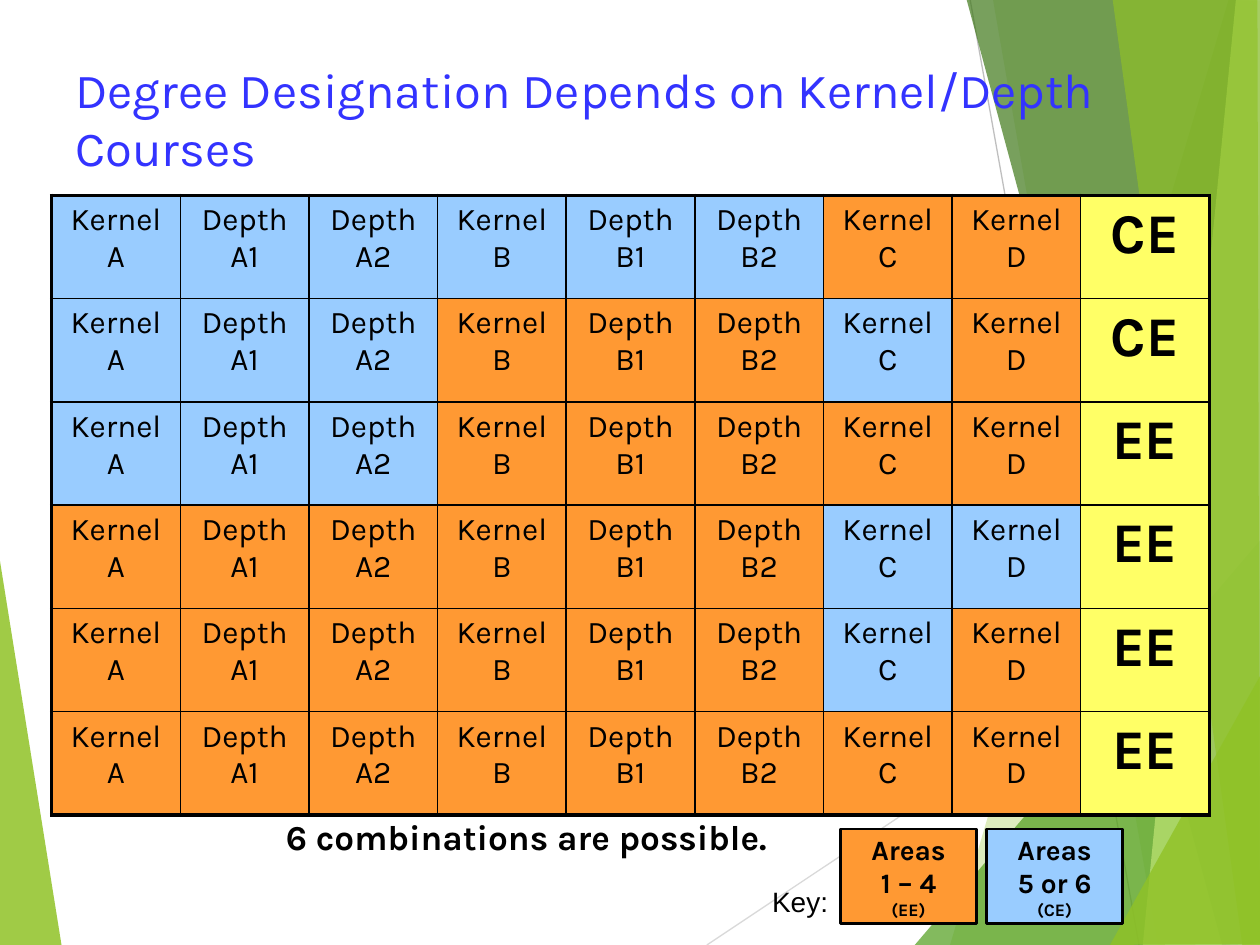
"""Build a slide that maps course choices to a CE or EE degree."""
from dataclasses import dataclass
from typing import Any

import lxml.etree
import pptx
import pptx.dml.color
import pptx.enum.shapes
import pptx.enum.text
import pptx.oxml.ns
import pptx.util

RGB = pptx.dml.color.RGBColor
ALIGN = pptx.enum.text.PP_ALIGN
LEFT, MID, RIGHT = ALIGN.LEFT, ALIGN.CENTER, ALIGN.RIGHT
TOP = pptx.enum.text.MSO_ANCHOR.TOP
CENTER = pptx.enum.text.MSO_ANCHOR.MIDDLE
qn = pptx.oxml.ns.qn

WIDE = pptx.util.Inches(10)
HIGH = pptx.util.Inches(7.5)

BLACK = RGB(0x00, 0x00, 0x00)
TITLE = RGB(0x33, 0x33, 0xFF)
BLUE = RGB(0x99, 0xCC, 0xFF)
ORANGE = RGB(0xFF, 0x99, 0x33)
YELLOW = RGB(0xFF, 0xFF, 0x66)
PALE = RGB(0xD9, 0xD9, 0xD9)
GREY = RGB(0xBF, 0xBF, 0xBF)
LIME = RGB(0x90, 0xC2, 0x26)
GREEN = RGB(0x54, 0xA0, 0x21)
FOREST = RGB(0x3F, 0x78, 0x19)
MINT = RGB(0xC0, 0xE4, 0x74)

Point = tuple[float, float]
Area = tuple[float, float, float, float]


@dataclass
class Facet:
    """A sheer shape with corners in percent of the slide."""
    color: RGB
    alpha: int
    dots: list[Point]


@dataclass
class Ray:
    """A thin line with ends in percent of the slide."""
    color: RGB
    start: Point
    end: Point


@dataclass
class Path:
    """A table row: area of each course (C or E) and the degree."""
    areas: str
    degree: str


@dataclass
class Key:
    """A colour sample with its left edge in percent."""
    left: float
    color: RGB
    span: str
    degree: str


COURSES = ["Kernel A", "Depth A1", "Depth A2", "Kernel B", "Depth B1",
           "Depth B2", "Kernel C", "Kernel D"]
FILLS = {"C": BLUE, "E": ORANGE}
PATHS = [Path("CCCCCCEE", "CE"), Path("CCCEEECE", "CE"),
         Path("CCCEEEEE", "EE"), Path("EEEEEECC", "EE"),
         Path("EEEEEECE", "EE"), Path("EEEEEEEE", "EE")]
KEYS = [Key(78.3, BLUE, "5 or 6", "(CE)"),
        Key(66.7, ORANGE, "1 – 4", "(EE)")]
RAYS = [Ray(PALE, (56.1, 100), (100.1, 60.93)),
        Ray(GREY, (77, 0), (90.4, 100))]
CORNER = Facet(LIME, 85, [(-0.1, 58.53), (4.9, 100.13), (-0.1, 100)])
FACETS = [
    Facet(LIME, 30, [(97.5, 0), (75.4, 100), (100.2, 100.13), (100.1, 0.13)]),
    Facet(LIME, 20, [(78.8, -0.13), (91.9, 100), (100.1, 100), (100.1, -0.13)]),
    Facet(GREEN, 72, [(72.6, 100), (100, 57.2), (100.1, 100)]),
    Facet(FOREST, 70, [(76.7, -0.13), (97, 100), (100.1, 99.87), (100.1, -0.13)]),
    Facet(MINT, 70, [(98.1, -0.13), (90.7, 100), (100.1, 100), (100, -0.13)]),
    Facet(LIME, 65, [(88.3, -0.13), (98.6, 100), (100, 100), (99.8, -0.13)]),
    Facet(LIME, 80, [(88.1, 100), (100.1, 71.33), (100.1, 99.87)]),
]


def place(x: float, y: float) -> tuple[int, int]:
    """Turn percent of the slide into lengths."""
    return round(WIDE * x / 100), round(HIGH * y / 100)


def frame(area: Area) -> tuple[int, int, int, int]:
    """Turn left, top, width and height in percent into lengths."""
    return place(*area[:2]) + place(*area[2:])


def write(body: Any, text: str, *, size: float, bold: bool = False,
          color: RGB = BLACK, face: str = "Karla", align: Any = MID,
          small: float = 0) -> None:
    """Fill a text frame; small sets the size of its last line."""
    body.text = text
    for par in body.paragraphs:
        par.alignment = align
        for run in par.runs:
            run.font.name = face
            run.font.size = pptx.util.Pt(size)
            run.font.bold = bold
            run.font.color.rgb = color
    if small:
        body.paragraphs[-1].runs[0].font.size = pptx.util.Pt(small)


def label(slide: Any, area: Area, text: str, **form: Any) -> None:
    """Add a text box that wraps."""
    body = slide.shapes.add_textbox(*frame(area)).text_frame
    body.word_wrap = True
    body.vertical_anchor = TOP
    write(body, text, **form)


def draw_facet(slide: Any, facet: Facet) -> None:
    """Add one sheer shape."""
    first, *rest = [place(*dot) for dot in facet.dots]
    pen = slide.shapes.build_freeform(*first)
    pen.add_line_segments(rest, close=True)
    shape = pen.convert_to_shape()
    shape.shadow.inherit = False
    shape.fill.solid()
    shape.fill.fore_color.rgb = facet.color
    shape.line.fill.background()
    tint = shape.fill._xPr.find(".//" + qn("a:srgbClr"))
    lxml.etree.SubElement(tint, qn("a:alpha"), val=str(facet.alpha * 1000))


def draw_ray(slide: Any, ray: Ray) -> None:
    """Add one thin line."""
    line = slide.shapes.add_connector(pptx.enum.shapes.MSO_CONNECTOR.STRAIGHT,
                                      *place(*ray.start), *place(*ray.end))
    line.line.color.rgb = ray.color
    line.line.width = pptx.util.Pt(0.75)
    lxml.etree.SubElement(line._element.spPr, qn("a:effectLst"))


def edge(cell: Any, side: str, thick: bool) -> None:
    """Rule one side of a cell."""
    width = pptx.util.Pt(2.25 if thick else 1)
    props = cell._tc.get_or_add_tcPr()
    line = lxml.etree.SubElement(props, qn("a:ln" + side), w=str(width))
    fill = lxml.etree.SubElement(line, qn("a:solidFill"))
    lxml.etree.SubElement(fill, qn("a:srgbClr"), val=str(BLACK))


def draw_table(slide: Any, area: Area) -> None:
    """Add the table of paths."""
    rows, cols = len(PATHS), len(COURSES) + 1
    table = slide.shapes.add_table(rows, cols, *frame(area)).table
    table.first_row = table.horz_banding = False
    for r, path in enumerate(PATHS):
        for c, text in enumerate(COURSES + [path.degree]):
            cell = table.cell(r, c)
            last = c == cols - 1
            rims = {"L": c == 0, "R": last, "T": r == 0, "B": r == rows - 1}
            for side, thick in rims.items():
                edge(cell, side, thick)
            cell.fill.solid()
            cell.fill.fore_color.rgb = YELLOW if last else FILLS[path.areas[c]]
            write(cell.text_frame, text, size=32 if last else 18, bold=last)


def draw_key(slide: Any, key: Key) -> None:
    """Add one colour sample."""
    shape = slide.shapes.add_shape(pptx.enum.shapes.MSO_SHAPE.RECTANGLE,
                                   *frame((key.left, 87.73, 10.8, 10)))
    shape.shadow.inherit = False
    shape.fill.solid()
    shape.fill.fore_color.rgb = key.color
    shape.line.color.rgb = BLACK
    shape.line.width = pptx.util.Pt(1.5)
    body = shape.text_frame
    body.word_wrap = False
    body.vertical_anchor = CENTER
    write(body, f"Areas\n{key.span}\n{key.degree}", size=16, bold=True, small=10)


def main() -> None:
    """Build and save the slide."""
    deck = pptx.Presentation()
    deck.slide_width, deck.slide_height = WIDE, HIGH
    slide = deck.slides.add_slide(deck.slide_layouts[6])
    draw_facet(slide, CORNER)
    for ray in RAYS:
        draw_ray(slide, ray)
    for facet in FACETS:
        draw_facet(slide, facet)
    label(slide, (5, 5.6, 90.2, 8.93),
          "Degree Designation Depends on Kernel/Depth Courses",
          size=28, color=TITLE, align=LEFT)
    draw_table(slide, (4.1, 20.67, 91.9, 65.6))
    for key in KEYS:
        draw_key(slide, key)
    label(slide, (21.7, 85.6, 53.3, 5.73), "6 combinations are possible.",
          size=20, bold=True, align=LEFT)
    label(slide, (52.5, 92.93, 14.2, 4.93), "Key:",
          size=16, face="Arial", align=RIGHT)
    deck.save("out.pptx")


if __name__ == "__main__":
    main()
